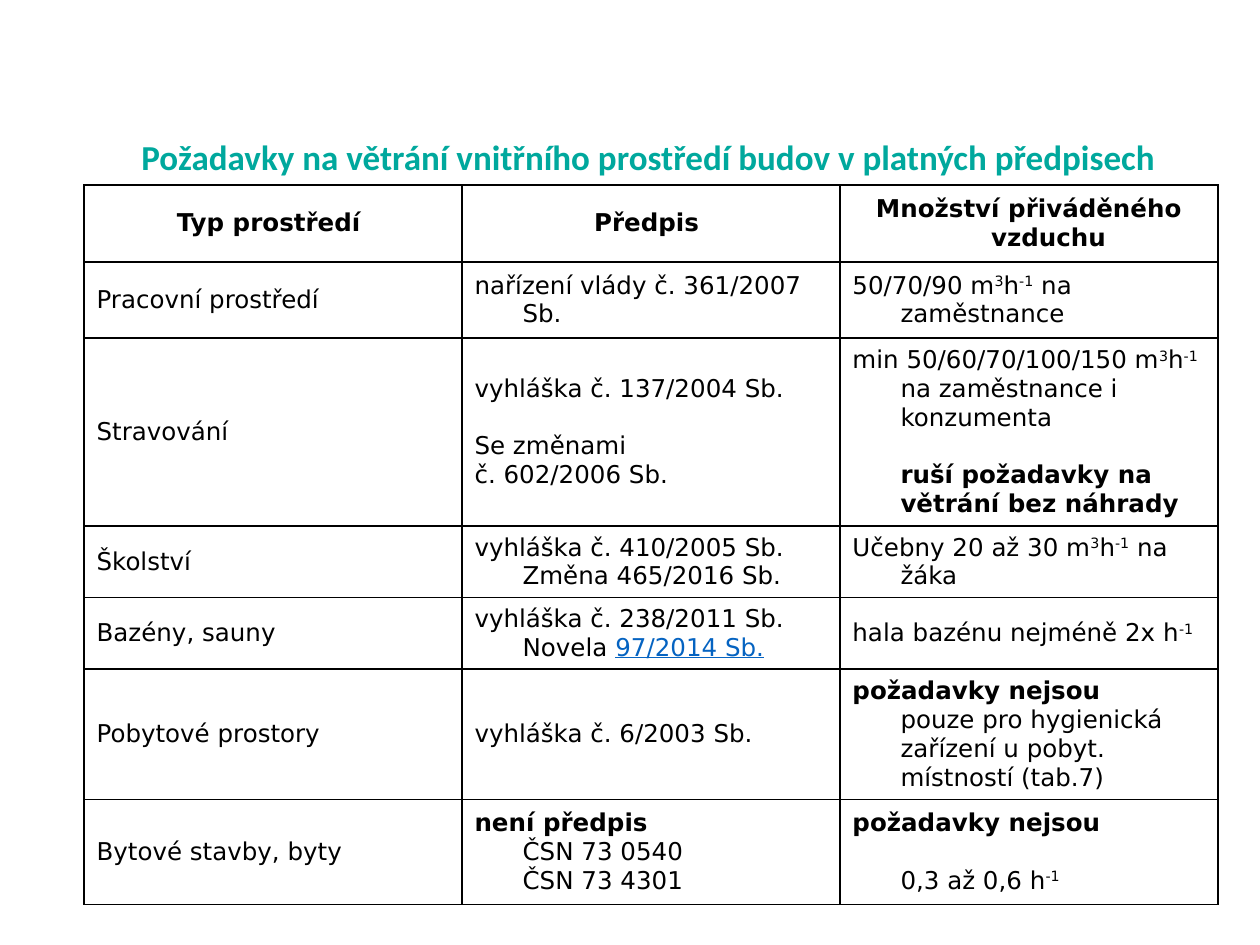
from lxml.etree import SubElement
from pptx import Presentation
from pptx.dml.color import RGBColor
from pptx.enum.text import MSO_ANCHOR, MSO_UNDERLINE, PP_ALIGN
from pptx.oxml.ns import qn
from pptx.util import Emu, Pt

PX = 914400 // 126
COLORS = {"title": "00A89D", "text": "000000", "link": "0563C1", "border": "000000", "cell": "FFFFFF"}
HANG = 48
GAP = 16.3
BOLD = {"bold": True}
LINK = {"color": "link", "underline": True}
CUBED = ("3", {"raised": True})
PER_UNIT = ("-1", {"raised": True})
AIR_FLOW = [CUBED, "h", PER_UNIT]

COLUMN_WIDTHS = [378] * 3
ROW_HEIGHTS = [77, 76, 186, 70, 70, 128, 105]
HEADER = ["Typ prostředí ", "Předpis ", "Množství přiváděného vzduchu "]
ROWS = [
    ["Pracovní prostředí", "nařízení vlády č. 361/2007 Sb.",
     [{"spans": ["50/70/90 m", *AIR_FLOW, " na zaměstnance"]}]],
    ["Stravování",
     [{"spans": ["vyhláška č. 137/2004 Sb. "]},
      {"spans": ["Se změnami"], "before": GAP},
      {"spans": ["č. 602/2006 Sb."]}],
     [{"spans": ["min 50/60/70/100/150 m", *AIR_FLOW, " na zaměstnance i konzumenta"]},
      {"spans": [("ruší požadavky na větrání bez náhrady", BOLD)], "before": GAP, "hanging": False}]],
    ["Školství", "vyhláška č. 410/2005 Sb. Změna 465/2016 Sb.",
     [{"spans": ["Učebny 20 až 30 m", *AIR_FLOW, " na žáka"]}]],
    ["Bazény, sauny",
     [{"spans": ["vyhláška č. 238/2011 Sb. Novela ", ("97/2014\u00a0Sb.", LINK)]}],
     [{"spans": ["hala bazénu nejméně 2x h", PER_UNIT]}]],
    ["Pobytové prostory", "vyhláška č. 6/2003 Sb.",
     [{"spans": [("požadavky nejsou\n", BOLD),
                 "pouze pro hygienická zařízení u pobyt. místností (tab.7)"]}]],
    ["Bytové stavby, byty",
     [{"spans": [("není předpis\n", BOLD), "ČSN 73 0540\nČSN 73 4301"]}],
     [{"spans": [("požadavky nejsou", BOLD)]},
      {"spans": ["0,3 až 0,6 h", PER_UNIT], "before": GAP, "hanging": False}]],
]


def px(length):
    return Emu(length * PX)


def rgb(name):
    return RGBColor.from_string(COLORS[name])


def add_text(paragraph, text, font="DejaVu Sans", size=14, color="text",
             bold=False, underline=False, raised=False):
    for index, line in enumerate(text.split("\n")):
        if index:
            paragraph.add_line_break()
        if not line:
            continue
        span = paragraph.add_run()
        span.text = line
        span.font.name = font
        span.font.size = Pt(size)
        span.font.bold = bold
        span.font.color.rgb = rgb(color)
        if underline:
            span.font.underline = MSO_UNDERLINE.SINGLE_LINE
        if raised:
            span.font._element.set("baseline", "30000")


def add_title(page, text):
    box = page.shapes.add_textbox(px(113), px(26), px(1071), px(158))
    frame = box.text_frame
    frame.word_wrap = True
    frame.vertical_anchor = MSO_ANCHOR.BOTTOM
    paragraph = frame.paragraphs[0]
    paragraph.alignment = PP_ALIGN.CENTER
    paragraph.line_spacing = 0.9
    add_text(paragraph, text, font="Calibri", size=20, color="title", bold=True)


def set_borders(cell):
    properties = cell._tc.get_or_add_tcPr()
    for index, side in enumerate(("lnL", "lnR", "lnT", "lnB")):
        line = SubElement(properties, qn(f"a:{side}"), w=str(Pt(1)))
        properties.insert(index, line)
        fill = SubElement(line, qn("a:solidFill"))
        SubElement(fill, qn("a:srgbClr"), val=COLORS["border"])


def fill_cell(cell, content, bold=False, alignment=PP_ALIGN.LEFT):
    cell.fill.solid()
    cell.fill.fore_color.rgb = rgb("cell")
    cell.vertical_anchor = MSO_ANCHOR.MIDDLE
    set_borders(cell)
    blocks = [{"spans": [content]}] if isinstance(content, str) else content
    frame = cell.text_frame
    for index, block in enumerate(blocks):
        paragraph = frame.add_paragraph() if index else frame.paragraphs[0]
        paragraph.alignment = alignment
        paragraph.space_before = Pt(block.get("before", 0))
        properties = paragraph._p.get_or_add_pPr()
        properties.set("marL", str(px(HANG)))
        properties.set("indent", str(px(-HANG if block.get("hanging", True) else 0)))
        for span in block["spans"]:
            text, style = (span, {}) if isinstance(span, str) else span
            add_text(paragraph, text, **{"bold": bold, **style})


def add_requirements_table(page):
    frame = page.shapes.add_table(len(ROW_HEIGHTS), len(COLUMN_WIDTHS), px(84), px(185),
                                  px(sum(COLUMN_WIDTHS)), px(sum(ROW_HEIGHTS)))
    table = frame.table
    table.horz_banding = False
    for column, width in zip(table.columns, COLUMN_WIDTHS):
        column.width = px(width)
    for row, height in zip(table.rows, ROW_HEIGHTS):
        row.height = px(height)
    for index, heading in enumerate(HEADER):
        fill_cell(table.cell(0, index), heading, bold=True, alignment=PP_ALIGN.CENTER)
    for row_index, contents in enumerate(ROWS, 1):
        for column_index, content in enumerate(contents):
            fill_cell(table.cell(row_index, column_index), content)


def main():
    deck = Presentation()
    deck.slide_width = px(1260)
    deck.slide_height = px(945)
    page = deck.slides.add_slide(deck.slide_layouts[6])
    add_title(page, "Požadavky na větrání vnitřního prostředí budov v platných předpisech")
    add_requirements_table(page)
    deck.save("out.pptx")


if __name__ == "__main__":
    main()
